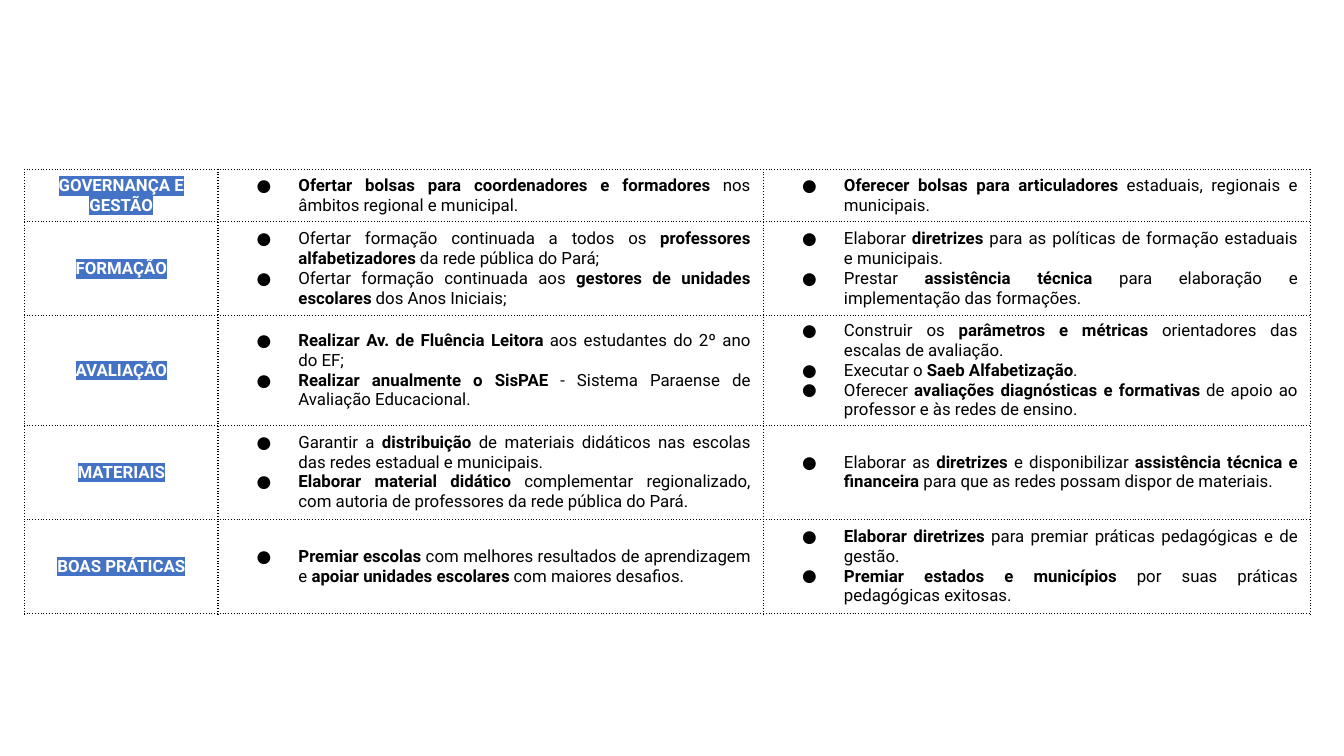
from lxml.etree import SubElement as Sub
from pptx import Presentation
from pptx.dml.color import RGBColor as Rgb
from pptx.enum.text import MSO_ANCHOR as Anchor, PP_ALIGN as Align
from pptx.oxml.ns import qn
from pptx.util import Cm, Pt

HUES = {"ink": "000000", "label": "FFFFFF", "mark": "4472C4"}
FONT = "Roboto"
COLS = [3.66, 10.31, 10.34]
ROWS = [0.99, 1.78, 1.78, 1.78, 1.78]

PLAN = [
    ("GOVERNANÇA E GESTÃO",
     ["*Ofertar bolsas para coordenadores e formadores* nos âmbitos regional e municipal."],
     ["*Oferecer bolsas para articuladores* estaduais, regionais e municipais."]),
    ("FORMAÇÃO",
     ["Ofertar formação continuada a todos os *professores alfabetizadores* da rede pública do Pará;",
      "Ofertar formação continuada aos* gestores de unidades escolares* dos Anos Iniciais;"],
     ["Elaborar *diretrizes* para as políticas de formação estaduais e municipais.",
      "Prestar *assistência técnica* para elaboração e implementação das formações."]),
    ("AVALIAÇÃO",
     ["*Realizar Av. de Fluência Leitora* aos estudantes do 2º ano do EF;",
      "*Realizar anualmente o SisPAE* - Sistema Paraense de Avaliação Educacional."],
     ["Construir os *parâmetros e métricas* orientadores das escalas de avaliação.",
      "Executar o* Saeb Alfabetização*.",
      "Oferecer *avaliações diagnósticas e formativas* de apoio ao professor e às redes de ensino."]),
    ("MATERIAIS",
     ["Garantir a *distribuição* de materiais didáticos nas escolas das redes estadual e municipais.",
      "*Elaborar material didático* complementar regionalizado, "
      "com autoria de professores da rede pública do Pará."],
     ["Elaborar as *diretrizes *e disponibilizar *assistência técnica e financeira* "
      "para que as redes possam dispor de materiais."]),
    ("BOAS PRÁTICAS",
     ["*Premiar escolas* com melhores resultados de aprendizagem e "
      "*apoiar unidades escolares* com maiores desafios."],
     ["*Elaborar diretrizes* para premiar práticas pedagógicas e de gestão.",
      "*Premiar estados e municípios* por suas práticas pedagógicas exitosas."]),
]


def add_run(para, text, hue, bold):
    run = para.add_run()
    run.text = text
    font = run.font
    font.name, font.size, font.bold = FONT, Pt(9), bold
    font.color.rgb = Rgb.from_string(HUES[hue])
    return run


def frame_cell(cell):
    cell.vertical_anchor = Anchor.MIDDLE
    cell.margin_left = cell.margin_right = Cm(0.25)
    cell.margin_top = cell.margin_bottom = Cm(0.1)
    props = cell._tc.get_or_add_tcPr()
    for side in ("lnL", "lnR", "lnT", "lnB"):
        line = Sub(props, qn(f"a:{side}"), w=str(Pt(0.75)))
        Sub(Sub(line, qn("a:solidFill")), qn("a:srgbClr"), val=HUES["ink"])
        Sub(line, qn("a:prstDash"), val="dot")
    cell.fill.background()


def fill_label(cell, text):
    para = cell.text_frame.paragraphs[0]
    para.alignment = Align.CENTER
    run = add_run(para, text, "label", True)
    props = run._r.get_or_add_rPr()
    mark = Sub(props, qn("a:highlight"))
    Sub(mark, qn("a:srgbClr"), val=HUES["mark"])
    props.find(qn("a:solidFill")).addnext(mark)


def fill_list(cell, items):
    frame = cell.text_frame
    for i, item in enumerate(items):
        para = frame.add_paragraph() if i else frame.paragraphs[0]
        para.alignment = Align.JUSTIFY
        props = para._p.get_or_add_pPr()
        props.set("marL", str(Cm(1.27)))
        props.set("indent", str(-Cm(0.79)))
        Sub(Sub(props, qn("a:buClr")), qn("a:srgbClr"), val=HUES["ink"])
        Sub(props, qn("a:buFont"), typeface=FONT)
        Sub(props, qn("a:buChar"), char="●")
        for j, part in enumerate(item.split("*")):
            if part:
                add_run(para, part, "ink", j % 2 == 1)


def add_plan(slide, left, top, cols, rows):
    shape = slide.shapes.add_table(len(rows), len(cols), Cm(left), Cm(top),
                                   Cm(sum(cols)), Cm(sum(rows)))
    table = shape.table
    table.first_row = table.horz_banding = False
    for col, width in zip(table.columns, cols):
        col.width = Cm(width)
    for row, height, (label, *lists) in zip(table.rows, rows, PLAN):
        row.height = Cm(height)
        head, *rest = row.cells
        for cell in row.cells:
            frame_cell(cell)
        fill_label(head, label)
        for cell, items in zip(rest, lists):
            fill_list(cell, items)


def main():
    deck = Presentation()
    deck.slide_width, deck.slide_height = Cm(25.4), Cm(14.29)
    slide = deck.slides.add_slide(deck.slide_layouts[6])
    add_plan(slide, 0.46, 3.2, COLS, ROWS)
    deck.save("out.pptx")


if __name__ == "__main__":
    main()
